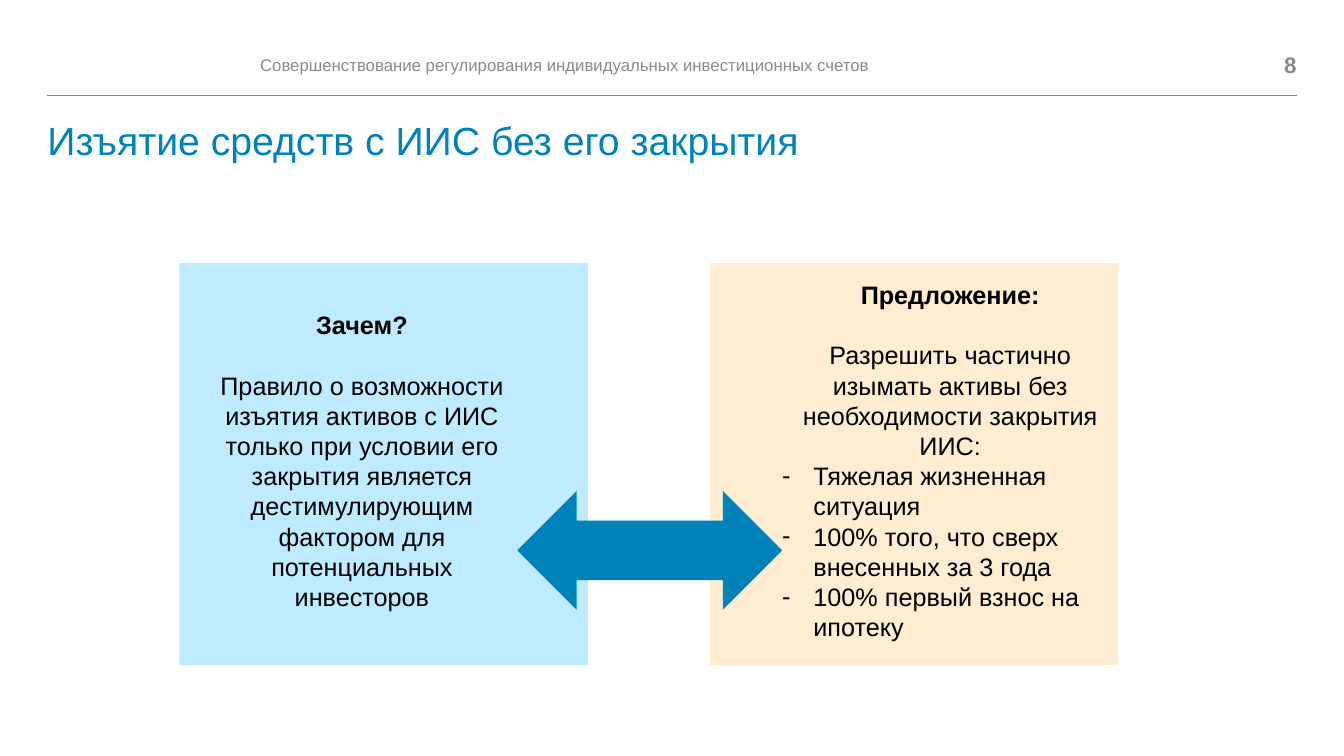
from lxml import etree
from pptx import Presentation
from pptx.dml.color import RGBColor
from pptx.enum import shapes, text
from pptx.oxml import ns
from pptx.util import Inches, Pt

FONT = "Arial"
BLUE, GREY, BLACK = "0082BB", "888A8D", "000000"
PALE_BLUE, PALE_ORANGE = "BEEBFF", "FEEDD1"
LEFT, RIGHT = 0.47, 12.86
PANEL_TOP, PANEL_W, PANEL_H = 2.61, 4.05, 3.99
BULLET_INDENT = 0.31
CENTER = text.PP_ALIGN.CENTER


def rgb(color):
    return RGBColor.from_string(color)


def add_run(p, words, size, color, bold=False):
    r = p.add_run()
    r.text = words
    r.font.name, r.font.size, r.font.bold = FONT, Pt(size), bold
    r.font.color.rgb = rgb(color)


def clear_margins(tf):
    tf.margin_left = tf.margin_right = tf.margin_top = tf.margin_bottom = 0


def add_box(s, x, y, w, h):
    tf = s.shapes.add_textbox(Inches(x), Inches(y), Inches(w), Inches(h)).text_frame
    tf.word_wrap = True
    return tf


def add_header(s, words, x, w, size, align, bold=False):
    tf = add_box(s, x, 0.47, w, 0.35)
    clear_margins(tf)
    tf.vertical_anchor = text.MSO_ANCHOR.MIDDLE
    p = tf.paragraphs[0]
    p.alignment = align
    add_run(p, words, size, GREY, bold)


def add_rule(s, y):
    line = s.shapes.add_connector(shapes.MSO_CONNECTOR.STRAIGHT,
                                  Inches(LEFT), Inches(y), Inches(RIGHT), Inches(y))
    line.line.color.rgb = rgb(GREY)
    line.line.width = Pt(0.5)
    etree.SubElement(line._element.spPr, ns.qn("a:effectLst"))


def add_title(s, words):
    title = s.shapes.title
    title.left, title.top = Inches(LEFT), Inches(1.21)
    title.width, title.height = Inches(RIGHT - LEFT), Inches(0.66)
    tf = title.text_frame
    clear_margins(tf)
    tf.auto_size = text.MSO_AUTO_SIZE.NONE
    tf.vertical_anchor = text.MSO_ANCHOR.TOP
    p = tf.paragraphs[0]
    p.alignment, p.line_spacing = text.PP_ALIGN.LEFT, 0.9
    add_run(p, words, 28, BLUE)


def add_filled(s, kind, x, y, w, h, color):
    sp = s.shapes.add_shape(kind, Inches(x), Inches(y), Inches(w), Inches(h))
    sp.shadow.inherit = False
    sp.fill.solid()
    sp.fill.fore_color.rgb = rgb(color)
    sp.line.fill.background()


def add_dash(p):
    pPr = p._p.get_or_add_pPr()
    pPr.set("marL", str(Inches(BULLET_INDENT)))
    pPr.set("indent", str(-Inches(BULLET_INDENT)))
    etree.SubElement(pPr, ns.qn("a:buFont")).set("typeface", FONT)
    etree.SubElement(pPr, ns.qn("a:buChar")).set("char", "-")


def add_argument(s, x, y, w, h, heading, body, points=()):
    tf = add_box(s, x, y, w, h)
    tf.auto_size = text.MSO_AUTO_SIZE.SHAPE_TO_FIT_TEXT
    p = tf.paragraphs[0]
    p.alignment = CENTER
    add_run(p, heading, 18, BLACK, True)
    p = tf.add_paragraph()
    p.alignment, p.space_before = CENTER, Pt(21.6)
    add_run(p, body, 18, BLACK)
    for point in points:
        p = tf.add_paragraph()
        p.alignment = text.PP_ALIGN.LEFT
        add_dash(p)
        add_run(p, point, 18, BLACK)


def main():
    prs = Presentation()
    prs.slide_width, prs.slide_height = Inches(13.33), Inches(7.5)
    s = prs.slides.add_slide(prs.slide_layouts[5])

    # Header and title
    add_rule(s, 0.95)
    add_title(s, "Изъятие средств с ИИС без его закрытия")
    add_header(s, "Совершенствование регулирования индивидуальных инвестиционных счетов",
               2.58, 9.23, 12, text.PP_ALIGN.LEFT)
    add_header(s, "8", 12.05, 0.81, 16, text.PP_ALIGN.RIGHT, True)

    # Panels joined by an arrow
    for x, color in ((1.78, PALE_BLUE), (7.04, PALE_ORANGE)):
        add_filled(s, shapes.MSO_SHAPE.RECTANGLE, x, PANEL_TOP, PANEL_W, PANEL_H, color)
    add_filled(s, shapes.MSO_SHAPE.LEFT_RIGHT_ARROW, 5.13, 4.87, 2.63, 1.18, BLUE)

    # Reason and proposal
    add_argument(s, 1.9, 3.02, 3.38, 3.43, "Зачем?",
                 "Правило о возможности изъятия активов с ИИС только при условии "
                 "его закрытия является дестимулирующим фактором для "
                 "потенциальных инвесторов")
    add_argument(s, 7.66, 2.72, 3.53, 4.04, "Предложение:",
                 "Разрешить частично изымать активы без необходимости закрытия ИИС:",
                 ("Тяжелая жизненная ситуация",
                  "100% того, что сверх внесенных за 3 года",
                  "100% первый взнос на ипотеку"))

    prs.save("out.pptx")


if __name__ == "__main__":
    main()
